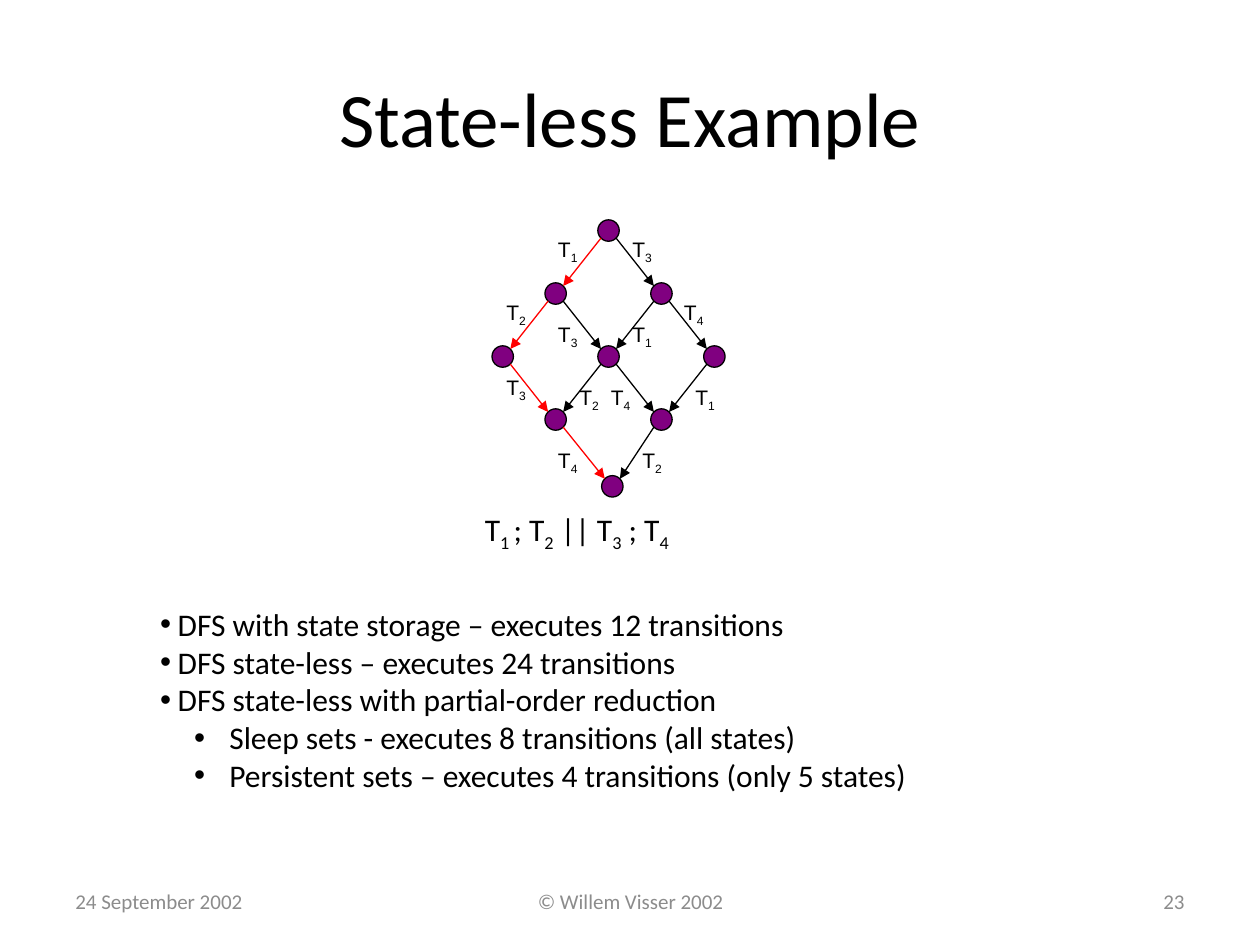
from pptx import Presentation
from pptx.dml.color import RGBColor
from pptx.enum.shapes import MSO_CONNECTOR as Line, MSO_SHAPE as Shape
from pptx.enum.text import MSO_ANCHOR as Anchor, MSO_AUTO_SIZE as Fit, PP_ALIGN as Align
from pptx.oxml.ns import qn
from pptx.util import Inches, Pt
from lxml import etree

BLACK = RGBColor(0x00, 0x00, 0x00)
RED = RGBColor(0xFF, 0x00, 0x00)
PURPLE = RGBColor(0x80, 0x00, 0x80)
GREY = RGBColor(0x8C, 0x8C, 0x8C)

LABEL = {"name": "Arial", "size": Pt(12)}
BODY = {"name": "Calibri", "size": Pt(18)}
FOOTER = {"name": "Calibri", "size": Pt(12)}
TITLE = {"name": "Calibri", "size": Pt(44)}


def add_span(para, text, formats, color=BLACK, subscript=False):
    span = para.add_run()
    span.text = text
    for name, value in formats.items():
        setattr(span.font, name, value)
    span.font.color.rgb = color
    if subscript:
        span.font._element.set("baseline", "-25000")


def add_box(left, top, width, height):
    box = page.shapes.add_textbox(Inches(left), Inches(top), Inches(width), Inches(height))
    box.text_frame.word_wrap = True
    return box.text_frame


deck = Presentation()
deck.slide_width, deck.slide_height = Inches(10), Inches(7.5)
page = deck.slides.add_slide(deck.slide_layouts[1])

# Title
title = page.shapes.title
title.left, title.top, title.width, title.height = map(Inches, (0.5, 0.3, 9, 1.25))
add_span(title.text_frame.paragraphs[0], "State-less Example", TITLE)

# Bulleted list
body = page.placeholders[1]
body.left, body.top, body.width, body.height = map(Inches, (1.17, 4.75, 7.95, 2.1))
body.text_frame.auto_size = Fit.NONE
items = [
    (0, "DFS with state storage – executes 12 transitions"),
    (0, "DFS state-less – executes 24 transitions"),
    (0, "DFS state-less with partial-order reduction"),
    (1, "Sleep sets - executes 8 transitions (all states)"),
    (1, "Persistent sets – executes 4 transitions (only 5 states)"),
]
indents = [(0.14, -0.14), (0.55, -0.28)]
for index, (level, text) in enumerate(items):
    para = body.text_frame.paragraphs[0] if index == 0 else body.text_frame.add_paragraph()
    para.level = level
    para.space_before = Pt(0)
    margin, hanging = indents[level]
    props = para._p.get_or_add_pPr()
    props.set("marL", str(Inches(margin)))
    props.set("indent", str(Inches(hanging)))
    etree.SubElement(props, qn("a:buFont")).set("typeface", "Arial")
    etree.SubElement(props, qn("a:buChar")).set("char", "•")
    add_span(para, text, BODY)

# State graph: centres on a diamond grid, the final state slightly off it
CENTER_X, TOP_Y, STEP_X, STEP_Y = 4.83, 1.83, 0.42, 0.5
DIAMETER, TRIM = 0.17, 0.06
grid = {
    "start": (0, 0), "left": (-1, 1), "right": (1, 1),
    "far left": (-2, 2), "middle": (0, 2), "far right": (2, 2),
    "low left": (-1, 3), "low right": (1, 3),
}
states = {name: (CENTER_X + column * STEP_X, TOP_Y + row * STEP_Y)
          for name, (column, row) in grid.items()}
states["final"] = (4.86, 3.86)
for x, y in states.values():
    state = page.shapes.add_shape(
        Shape.OVAL, Inches(x - DIAMETER / 2), Inches(y - DIAMETER / 2),
        Inches(DIAMETER), Inches(DIAMETER))
    state.shadow.inherit = False
    state.fill.solid()
    state.fill.fore_color.rgb = PURPLE
    state.line.color.rgb = BLACK
    state.line.width = Pt(0.75)

# Transitions: from, to, colour, number, label left and top
transitions = [
    ("start", "left", RED, "1", 4.33, 1.83),
    ("start", "right", BLACK, "3", 4.92, 1.83),
    ("left", "far left", RED, "2", 3.92, 2.33),
    ("left", "middle", BLACK, "3", 4.33, 2.5),
    ("right", "middle", BLACK, "1", 4.92, 2.5),
    ("right", "far right", BLACK, "4", 5.33, 2.33),
    ("far left", "low left", RED, "3", 3.92, 2.92),
    ("middle", "low left", BLACK, "2", 4.5, 3),
    ("middle", "low right", BLACK, "4", 4.75, 3),
    ("far right", "low right", BLACK, "1", 5.42, 3),
    ("low left", "final", RED, "4", 4.33, 3.5),
    ("low right", "final", BLACK, "2", 5, 3.5),
]
for source, target, color, number, left, top in transitions:
    (x1, y1), (x2, y2) = states[source], states[target]
    shift = TRIM if x2 > x1 else -TRIM
    arrow = page.shapes.add_connector(
        Line.STRAIGHT, Inches(x1 + shift), Inches(y1 + TRIM),
        Inches(x2 - shift), Inches(y2 - TRIM))
    arrow.line.color.rgb = color
    arrow.line.width = Pt(0.75)
    etree.SubElement(arrow.line._get_or_add_ln(), qn("a:tailEnd")).set("type", "triangle")
    etree.SubElement(arrow._element.spPr, qn("a:effectLst"))

    para = add_box(left, top, 0.5, 0.3).paragraphs[0]
    add_span(para, "T", LABEL)
    add_span(para, number, LABEL, subscript=True)

# Formula below the graph
para = add_box(3.75, 4, 2.33, 0.5).paragraphs[0]
for text, number in [("T", "1 "), ("; T", "2"), (" || T", "3"), (" ; T", "4")]:
    add_span(para, text, BODY)
    add_span(para, number, BODY, subscript=True)

# Footer
for left, width, text, align in [
    (0.5, 2.33, "24 September 2002", Align.LEFT),
    (3.42, 3.17, "© Willem Visser 2002", Align.CENTER),
    (7.17, 2.33, "23", Align.RIGHT),
]:
    frame = add_box(left, 6.95, width, 0.4)
    frame.vertical_anchor = Anchor.MIDDLE
    frame.paragraphs[0].alignment = align
    add_span(frame.paragraphs[0], text, FOOTER, GREY)

deck.save("out.pptx")
